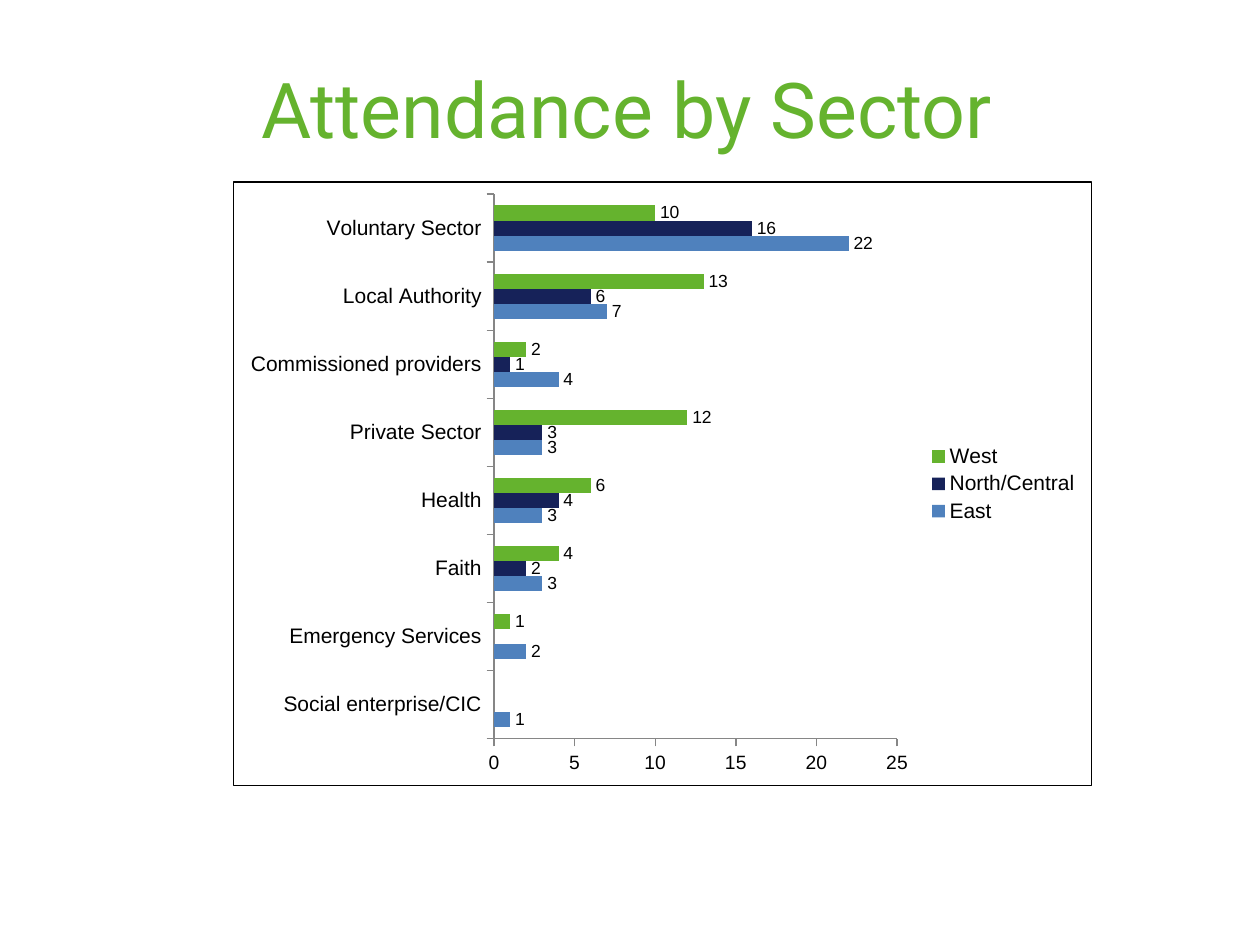
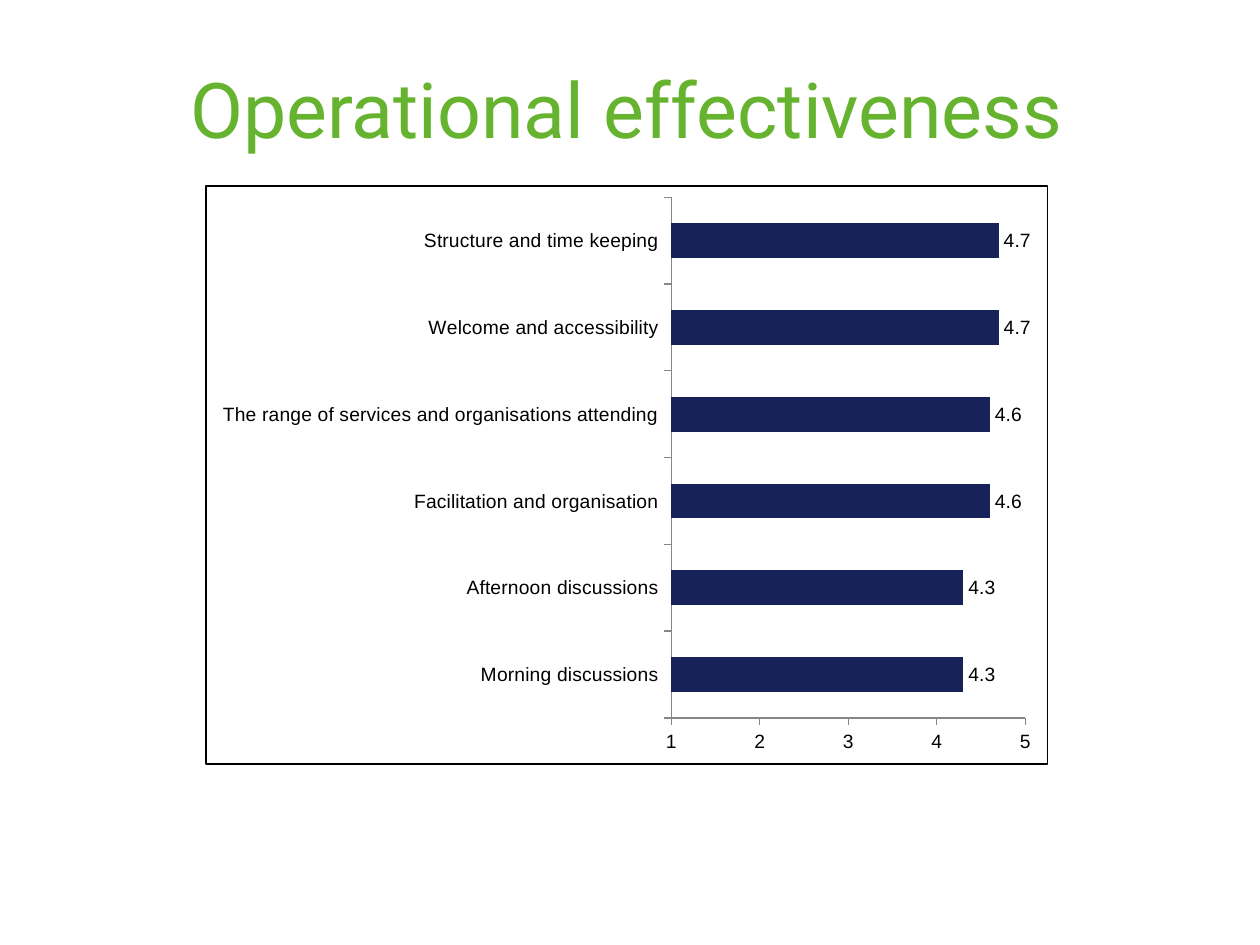
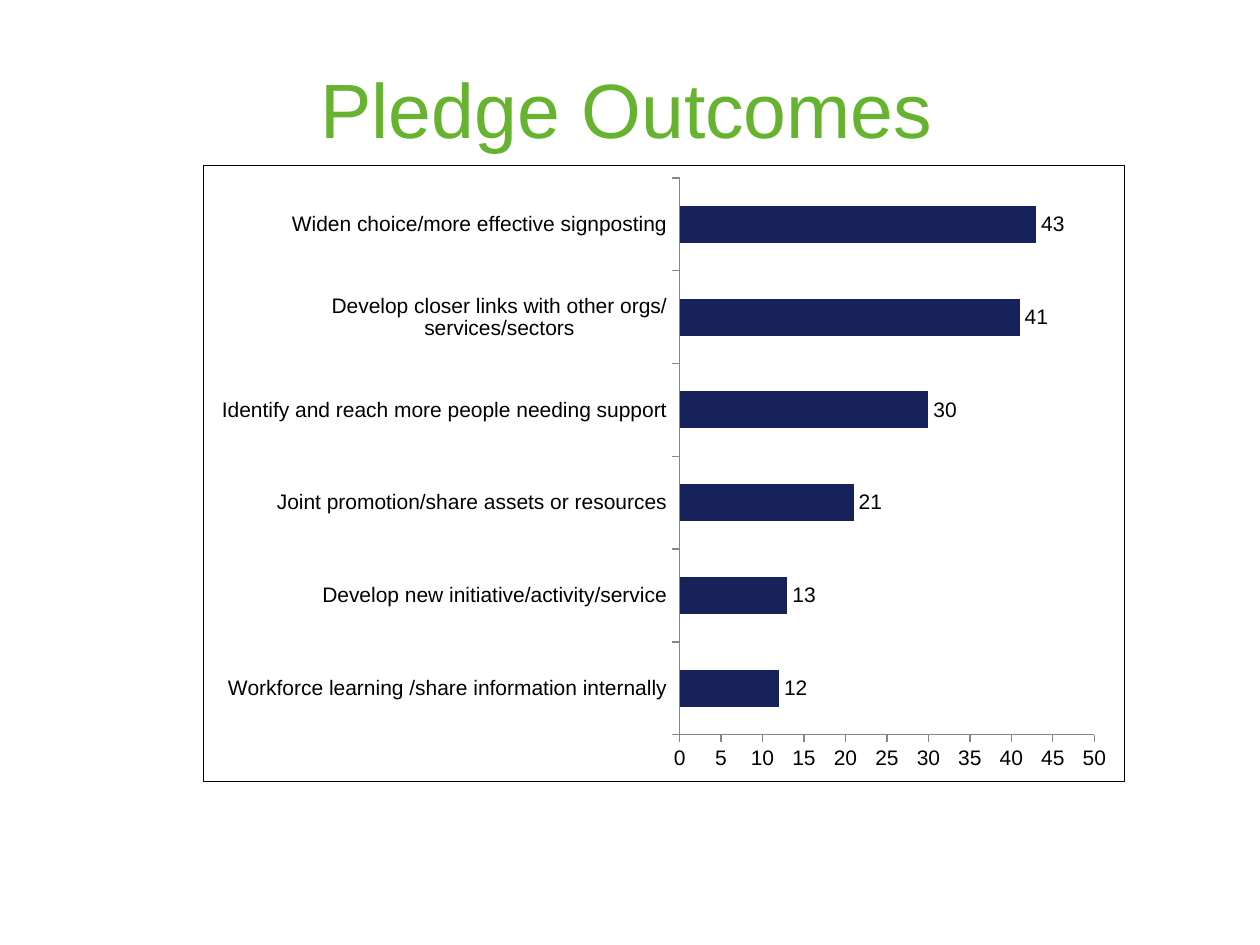
from lxml import etree
from pptx import Presentation
from pptx import util as u
from pptx.chart.data import CategoryChartData
from pptx.dml.color import RGBColor
from pptx.enum import chart as ch, text
from pptx.oxml import parse_xml
from pptx.oxml.ns import nsdecls

COLORS = {"green": "65B32E", "navy": "162259", "blue": "4F81BD",
          "black": "000000", "axis": "868686", "white": "FFFFFF"}
BODY_FONT = "Arial"

SECTORS = ["Social enterprise/CIC", "Emergency Services", "Faith", "Health",
           "Private Sector", "Commissioned providers", "Local Authority",
           "Voluntary Sector"]
ATTENDANCE = [("East", [1, 2, 3, 3, 3, 4, 7, 22], "blue"),
              ("North/Central", [None, None, 2, 4, 3, 1, 6, 16], "navy"),
              ("West", [None, 1, 4, 6, 12, 2, 13, 10], "green")]

OPERATIONS = ["Morning discussions", "Afternoon discussions",
              "Facilitation and organisation",
              "The range of services and organisations attending",
              "Welcome and accessibility", "Structure and time keeping"]
RATINGS = [("Series 1", [4.3, 4.3, 4.6, 4.6, 4.7, 4.7], "navy")]

OUTCOMES = ["Workforce learning /share information internally",
            "Develop new initiative/activity/service",
            "Joint promotion/share assets or resources",
            "Identify and reach more people needing support",
            "Develop closer links with other orgs/services/sectors",
            "Widen choice/more effective signposting"]
PLEDGES = [("Series 1", [12, 13, 21, 30, 41, 43], "navy")]


def rgb(name):
    return RGBColor.from_string(COLORS[name])


def style_font(font, size, color="black", name=BODY_FONT):
    font.name = name
    font.size = u.Pt(size)
    font.color.rgb = rgb(color)


def add_titled_slide(prs, title, font=BODY_FONT):
    s = prs.slides.add_slide(prs.slide_layouts[6])
    box = s.shapes.add_textbox(u.Inches(0.12), u.Inches(0.4),
                               u.Inches(9.71), u.Inches(0.91))
    tf = box.text_frame
    tf.word_wrap = True
    tf.vertical_anchor = text.MSO_ANCHOR.MIDDLE
    p = tf.paragraphs[0]
    p.text = title
    p.alignment = text.PP_ALIGN.CENTER
    style_font(p.font, 44, "green", font)
    return s


def add_frame(chart):
    """Give the chart area a white fill and a thin black border."""
    sp_pr = parse_xml(
        f'<c:spPr {nsdecls("c", "a")}>'
        f'<a:solidFill><a:srgbClr val="{COLORS["white"]}"/></a:solidFill>'
        f'<a:ln w="{u.Pt(0.75)}"><a:solidFill>'
        f'<a:srgbClr val="{COLORS["black"]}"/></a:solidFill></a:ln></c:spPr>')
    chart.element.find(etree.QName(sp_pr).text.replace("spPr", "chart")).addnext(sp_pr)


def style_axis(axis, size):
    axis.has_major_gridlines = False
    axis.major_tick_mark = ch.XL_TICK_MARK.OUTSIDE
    axis.minor_tick_mark = ch.XL_TICK_MARK.NONE
    axis.format.line.color.rgb = rgb("axis")
    axis.format.line.width = u.Pt(0.75)
    style_font(axis.tick_labels.font, size)


def style_series(series, color, label_size):
    series.format.fill.solid()
    series.format.fill.fore_color.rgb = rgb(color)
    labels = series.data_labels
    labels.show_value = True
    labels.position = ch.XL_LABEL_POSITION.OUTSIDE_END
    style_font(labels.font, label_size)


def add_bar_chart(s, bounds, categories, rows, cat_size, val_size, label_size):
    data = CategoryChartData()
    data.categories = categories
    for name, values, _ in rows:
        data.add_series(name, values)
    chart = s.shapes.add_chart(ch.XL_CHART_TYPE.BAR_CLUSTERED,
                               *map(u.Inches, bounds), data).chart
    style_font(chart.font, 10, name="Calibri")
    add_frame(chart)
    chart.has_title = False
    chart.has_legend = False
    plot = chart.plots[0]
    plot.gap_width = 150
    plot.vary_by_categories = False
    style_axis(chart.category_axis, cat_size)
    style_axis(chart.value_axis, val_size)
    for series, (_, _, color) in zip(plot.series, rows):
        style_series(series, color, label_size)
    return chart


def add_legend(chart, size):
    chart.has_legend = True
    chart.legend.position = ch.XL_LEGEND_POSITION.RIGHT
    chart.legend.include_in_layout = False
    style_font(chart.legend.font, size)


def main():
    prs = Presentation()
    prs.slide_width, prs.slide_height = u.Inches(10), u.Inches(7.5)

    s = add_titled_slide(prs, "Attendance by Sector", "Roboto")
    chart = add_bar_chart(s, (1.85, 1.44, 6.82, 4.8), SECTORS, ATTENDANCE,
                          cat_size=12, val_size=11, label_size=10)
    add_legend(chart, 12)

    s = add_titled_slide(prs, "Operational effectiveness", "Roboto")
    chart = add_bar_chart(s, (1.63, 1.47, 6.69, 4.6), OPERATIONS, RATINGS,
                          cat_size=11, val_size=11, label_size=11)
    axis = chart.value_axis
    axis.minimum_scale, axis.maximum_scale, axis.major_unit = 1, 5, 1

    s = add_titled_slide(prs, "Pledge Outcomes")
    add_bar_chart(s, (1.61, 1.31, 7.32, 4.9), OUTCOMES, PLEDGES,
                  cat_size=12, val_size=12, label_size=12)

    prs.save("out.pptx")


if __name__ == "__main__":
    main()
